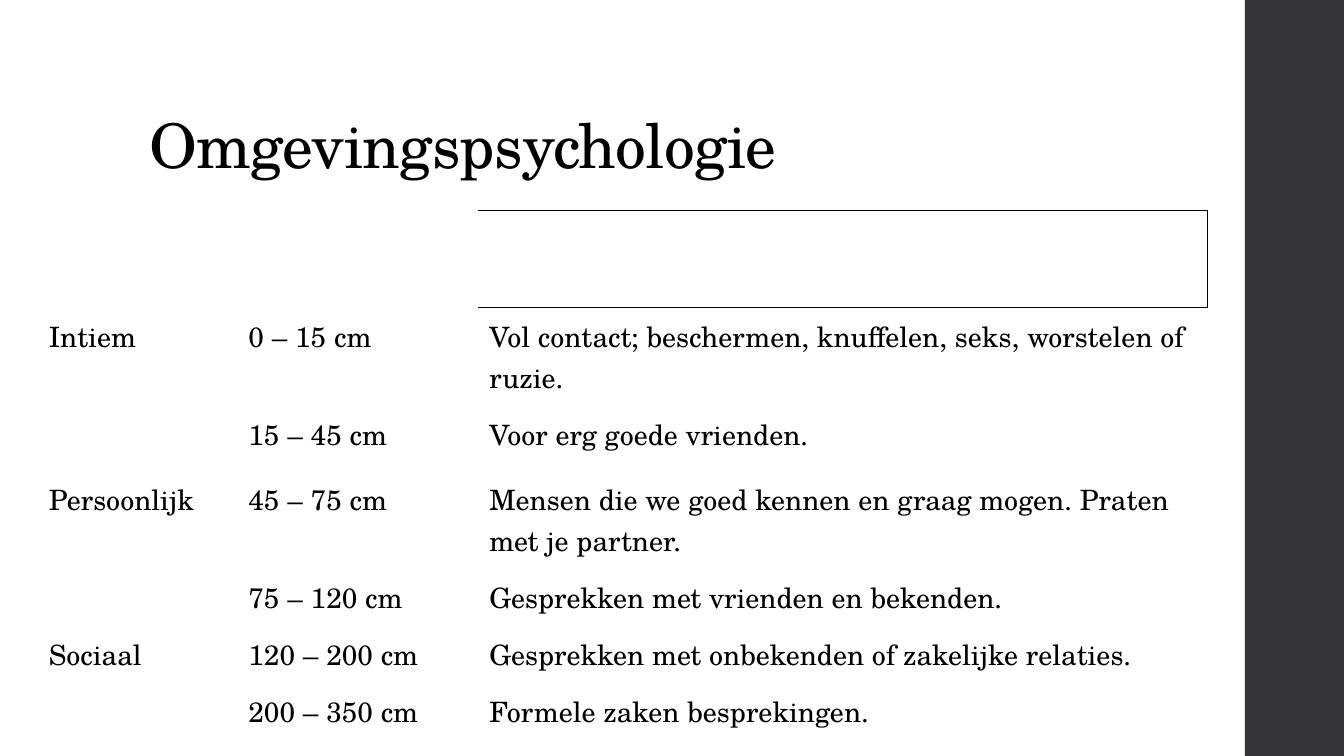
import pptx
import pptx.dml.color
import pptx.enum.text
import pptx.oxml
import pptx.oxml.ns
import pptx.util

Cm = pptx.util.Cm
Pt = pptx.util.Pt

COLOURS = {"text": "000000", "paper": "FFFFFF", "sidebar": "353537", "border": "000000"}
FONT = "TeX Gyre Schola"
NO_GRID_STYLE = "{2D5ABB26-0587-4C30-8999-92F81FD0307C}"

COLUMN_WIDTHS = [5.03, 6.07, 18.37]
ROW_HEIGHTS = [2.45, 2.45, 1.63, 2.45, 1.43, 1.43, 1.9]
ZONES = [
    ("", "", ""),
    ("Intiem", "0 – 15 cm", "Vol contact; beschermen, knuffelen, seks, worstelen of ruzie."),
    ("", "15 – 45 cm", "Voor erg goede vrienden."),
    ("Persoonlijk", "45 – 75 cm", "Mensen die we goed kennen en graag mogen. Praten met je partner."),
    ("", "75 – 120 cm", "Gesprekken met vrienden en bekenden."),
    ("Sociaal", "120 – 200 cm", "Gesprekken met onbekenden of zakelijke relaties."),
    ("", "200 – 350 cm", "Formele zaken besprekingen."),
]


def colour(name):
    return pptx.dml.color.RGBColor.from_string(COLOURS[name])


def style_font(para, size):
    para.font.name = FONT
    para.font.size = Pt(size)
    para.font.color.rgb = colour("text")


def add_sidebar(page, left, top, width, height):
    bar = page.shapes.add_shape(1, left, top, width, height)
    bar.shadow.inherit = False
    bar.fill.solid()
    bar.fill.fore_color.rgb = colour("sidebar")
    bar.line.fill.background()


def fill_title(page, left, top, width, height):
    title = page.shapes.title
    title.left, title.top, title.width, title.height = left, top, width, height
    frame = title.text_frame
    frame.word_wrap = True
    frame.auto_size = pptx.enum.text.MSO_AUTO_SIZE.NONE
    frame.vertical_anchor = pptx.enum.text.MSO_ANCHOR.BOTTOM
    para = frame.paragraphs[0]
    para.alignment = pptx.enum.text.PP_ALIGN.LEFT
    para.line_spacing = 0.9
    span = para.add_run()
    span.text = "Omgevingspsychologie"
    style_font(para, 44)
    span.font._element.set("spc", "-50")


def add_borders(cell, sides):
    """Draw thin lines on the given sides, in the order L, R, T, B."""
    properties = cell._tc.get_or_add_tcPr()
    for position, side in enumerate(sides):
        line = pptx.oxml.parse_xml(
            f'<a:ln{side} {pptx.oxml.ns.nsdecls("a")} w="9525"><a:solidFill>'
            f'<a:srgbClr val="{COLOURS["border"]}"/></a:solidFill></a:ln{side}>'
        )
        properties.insert(position, line)


def add_zone_table(page, left, top, width, height):
    frame = page.shapes.add_table(len(ZONES), len(COLUMN_WIDTHS), left, top, width, height)
    table = frame.table
    table.first_row = table.horz_banding = False
    table._tbl.tblPr.find(pptx.oxml.ns.qn("a:tableStyleId")).text = NO_GRID_STYLE
    for column, column_width in zip(table.columns, COLUMN_WIDTHS):
        column.width = Cm(column_width)
    for row, row_height, texts in zip(table.rows, ROW_HEIGHTS, ZONES):
        row.height = Cm(row_height)
        for cell, text in zip(row.cells, texts):
            cell.margin_left = cell.margin_right = Cm(0.28)
            cell.margin_top = cell.margin_bottom = Cm(0.2)
            cell.fill.solid()
            cell.fill.fore_color.rgb = colour("paper")
            cell.text = text
            style_font(cell.text_frame.paragraphs[0], 20)
    heading = table.cell(0, 2)
    heading.fill.background()
    add_borders(heading, "RTB")


def main():
    deck = pptx.Presentation()
    deck.slide_width, deck.slide_height = Cm(33.87), Cm(19.05)
    page = deck.slides.add_slide(deck.slide_layouts[5])
    add_sidebar(page, Cm(31.37), 0, Cm(2.5), deck.slide_height)
    fill_title(page, Cm(3.51), Cm(1.02), Cm(26.92), Cm(3.68))
    add_zone_table(page, Cm(0.95), Cm(5.3), Cm(sum(COLUMN_WIDTHS)), Cm(sum(ROW_HEIGHTS)))
    deck.save("out.pptx")


if __name__ == "__main__":
    main()
